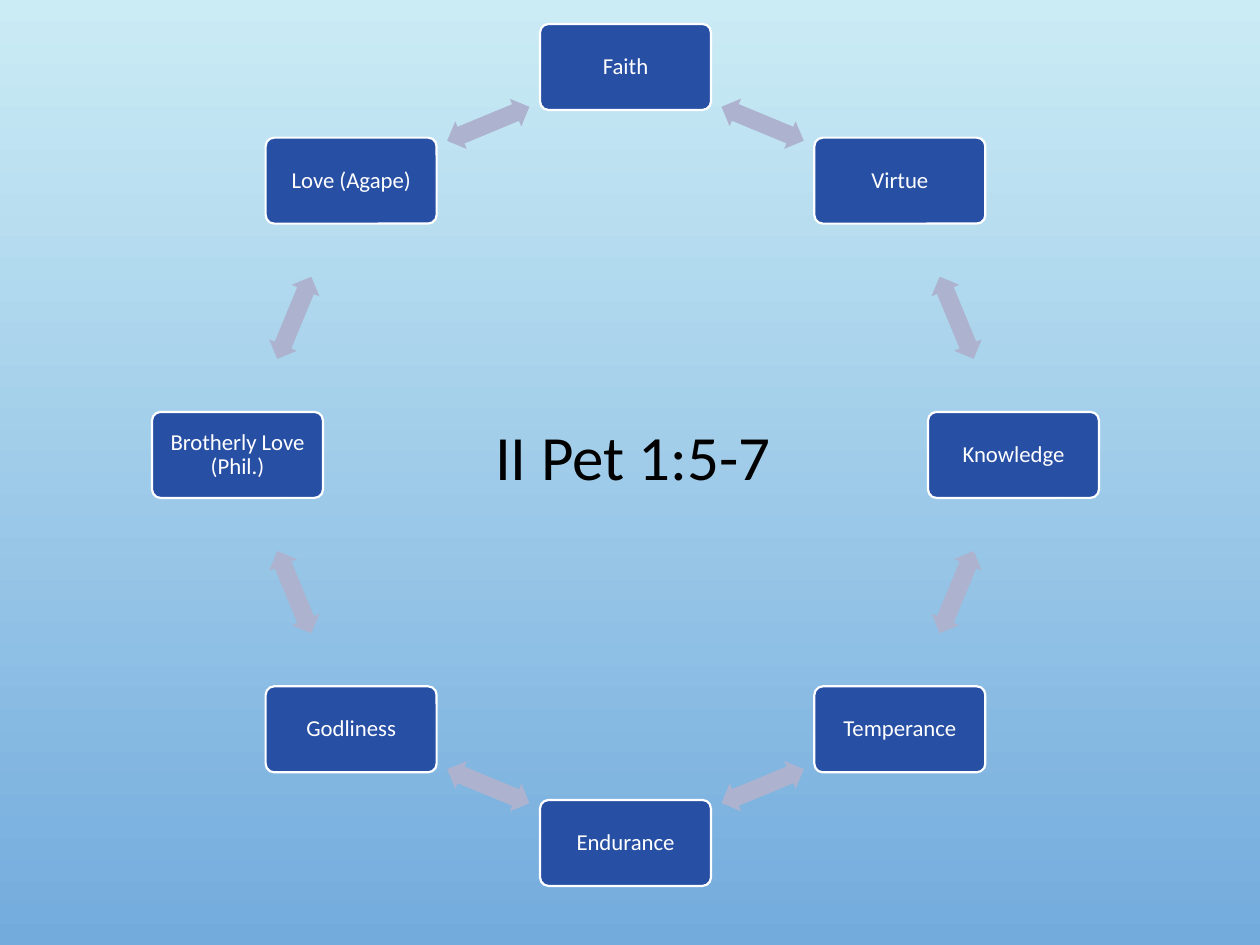
from collections import namedtuple
from dataclasses import dataclass
from math import cos, pi, sin

from pptx import Presentation
from pptx.dml.color import RGBColor
from pptx.enum.shapes import MSO_SHAPE
from pptx.enum.text import MSO_ANCHOR, MSO_AUTO_SIZE, PP_ALIGN
from pptx.util import Pt

ROUNDED = MSO_SHAPE.ROUNDED_RECTANGLE
DOUBLE_ARROW = MSO_SHAPE.LEFT_RIGHT_ARROW
MIDDLE = MSO_ANCHOR.MIDDLE
CENTER = PP_ALIGN.CENTER
NO_FIT = MSO_AUTO_SIZE.NONE

EMU_PER_PX = 914400 // 126
PAGE_WIDTH, PAGE_HEIGHT = 1260, 945
TITLE_ONLY = 5

Box = namedtuple("Box", "left top width height")


@dataclass(frozen=True)
class Theme:
    """Colours, font and type sizes of the slide."""
    sky_top: str = "CBECF5"
    sky_bottom: str = "73ABDD"
    node: str = "274FA4"
    arrow: str = "ADB3CF"
    light: str = "FFFFFF"
    dark: str = "000000"
    font: str = "Calibri"
    node_size: int = 13
    title_size: int = 36
    outline: float = 1.25


THEME = Theme()
VIRTUES = ["Faith", "Virtue", "Knowledge", "Temperance", "Endurance",
           "Godliness", "Brotherly Love (Phil.)", "Love (Agape)"]
RING_BOX = Box(152, 24, 947, 862)
TITLE_BOX = Box(393, 411, 480, 89)
NODE_WIDTH, NODE_HEIGHT = 171, 86
ARROW_WIDTH, ARROW_HEIGHT = 89, 30
NODE_INSET = 9


def px(value):
    """Turn px into EMU."""
    return round(value * EMU_PER_PX)


def rgb(code):
    """Turn a hex code into a colour."""
    return RGBColor.from_string(code)


def write(frame, text, size, color):
    """Write one centred line of text and return its paragraph."""
    frame.word_wrap = True
    frame.vertical_anchor = MIDDLE
    para = frame.paragraphs[0]
    para.alignment = CENTER
    span = para.add_run()
    span.text = text
    span.font.name = THEME.font
    span.font.size = Pt(size)
    span.font.color.rgb = rgb(color)
    return para


def add_solid(page, kind, center, width, height, color):
    """Add a flat preset shape around a centre point."""
    x, y = center
    shape = page.shapes.add_shape(
        kind, px(x - width / 2), px(y - height / 2), px(width), px(height))
    shape.shadow.inherit = False
    shape.fill.solid()
    shape.fill.fore_color.rgb = rgb(color)
    return shape


def add_node(page, center, label):
    """Add one labelled rounded box."""
    node = add_solid(page, ROUNDED, center, NODE_WIDTH, NODE_HEIGHT, THEME.node)
    node.adjustments[0] = 0.1
    node.line.color.rgb = rgb(THEME.light)
    node.line.width = Pt(THEME.outline)
    frame = node.text_frame
    frame.margin_left = frame.margin_right = px(NODE_INSET)
    frame.margin_top = frame.margin_bottom = px(NODE_INSET)
    para = write(frame, label, THEME.node_size, THEME.light)
    para.line_spacing = 0.9


def add_arrow(page, center, rotation):
    """Add one double arrow turned along the ring."""
    arrow = add_solid(page, DOUBLE_ARROW, center, ARROW_WIDTH, ARROW_HEIGHT, THEME.arrow)
    arrow.adjustments[0] = 0.6
    arrow.adjustments[1] = 0.5
    arrow.line.fill.background()
    arrow.rotation = rotation


def add_ring(page, box, labels):
    """Place the labels clockwise on a circle, with arrows between neighbours."""
    radius = (box.height - NODE_HEIGHT) / 2
    step = 2 * pi / len(labels)

    def point(turns, distance):
        """Find the place a number of steps clockwise from the top."""
        angle = turns * step
        return (box.left + box.width / 2 + distance * sin(angle),
                box.top + box.height / 2 - distance * cos(angle))

    for index, label in enumerate(labels):
        add_node(page, point(index, radius), label)
        halfway = index + 0.5
        add_arrow(page, point(halfway, radius * cos(step / 2)),
                  halfway * 360 / len(labels))


def add_title(page, box, text):
    """Set the title in the middle of the ring."""
    title = page.shapes.title
    title.left, title.top, title.width, title.height = map(px, box)
    title.text_frame.auto_size = NO_FIT
    write(title.text_frame, text, THEME.title_size, THEME.dark)


def paint_background(page):
    """Fill the page with a gradient from top to bottom."""
    fill = page.background.fill
    fill.gradient()
    fill.gradient_angle = 270
    colors = (THEME.sky_top, THEME.sky_bottom)
    for position, (stop, color) in enumerate(zip(fill.gradient_stops, colors)):
        stop.position = position
        stop.color.rgb = rgb(color)


def main():
    """Build and save the deck."""
    deck = Presentation()
    deck.slide_width, deck.slide_height = px(PAGE_WIDTH), px(PAGE_HEIGHT)
    page = deck.slides.add_slide(deck.slide_layouts[TITLE_ONLY])
    paint_background(page)
    add_ring(page, RING_BOX, VIRTUES)
    add_title(page, TITLE_BOX, "II Pet 1:5-7")
    deck.save("out.pptx")


if __name__ == "__main__":
    main()
